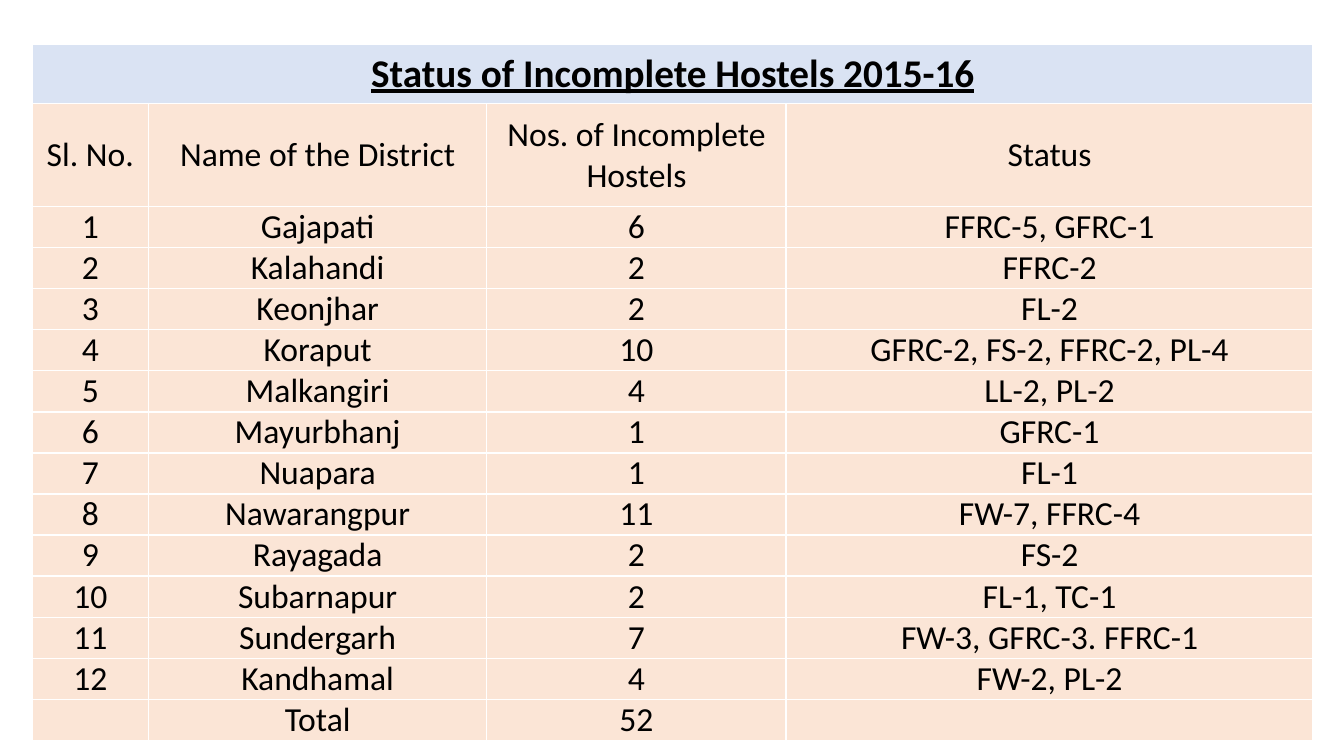
"""Build a slide with a table of incomplete hostels by district, 2015-16."""
from dataclasses import dataclass

import lxml.etree
import pptx
import pptx.dml.color
import pptx.enum.text
import pptx.oxml.ns
import pptx.util
from pptx.util import Cm


@dataclass(frozen=True)
class Theme:
    font: str = "Calibri"
    title_size: int = 28
    body_size: int = 24
    border_width: int = 1
    text: str = "000000"
    title_fill: str = "DAE3F3"
    body_fill: str = "FBE5D6"
    border: str = "FFFFFF"


def add_borders(cell):
    properties = cell._tc.get_or_add_tcPr()
    for side in ("lnL", "lnR", "lnT", "lnB"):
        line = lxml.etree.SubElement(properties, pptx.oxml.ns.qn(f"a:{side}"))
        line.set("w", str(pptx.util.Pt(theme.border_width)))
        fill = lxml.etree.SubElement(line, pptx.oxml.ns.qn("a:solidFill"))
        color = lxml.etree.SubElement(fill, pptx.oxml.ns.qn("a:srgbClr"))
        color.set("val", theme.border)


theme = Theme()
title = "Status of Incomplete Hostels 2015-16"
headings = ("Sl. No.", "Name of the District", "Nos. of Incomplete Hostels", "Status")
districts = [
    ("Gajapati", 6, "FFRC-5, GFRC-1"),
    ("Kalahandi", 2, "FFRC-2"),
    ("Keonjhar", 2, "FL-2"),
    ("Koraput", 10, "GFRC-2, FS-2, FFRC-2, PL-4"),
    ("Malkangiri", 4, "LL-2, PL-2"),
    ("Mayurbhanj", 1, "GFRC-1"),
    ("Nuapara", 1, "FL-1"),
    ("Nawarangpur", 11, "FW-7, FFRC-4"),
    ("Rayagada", 2, "FS-2"),
    ("Subarnapur", 2, "FL-1, TC-1"),
    ("Sundergarh", 7, "FW-3, GFRC-3. FFRC-1"),
    ("Kandhamal", 4, "FW-2, PL-2"),
]
total = sum(count for name, count, status in districts)
rows = [
    (title, "", "", ""),
    headings,
    *((number, *district) for number, district in enumerate(districts, 1)),
    ("", "Total", total, ""),
]
column_widths = [Cm(2.93), Cm(8.53), Cm(7.54), Cm(13.28)]
row_heights = [Cm(1.49), Cm(2.6)] + [Cm(1.02)] * (len(districts) + 1)

deck = pptx.Presentation()
deck.slide_width, deck.slide_height = Cm(33.87), Cm(19.05)
page = deck.slides.add_slide(deck.slide_layouts.get_by_name("Blank"))

table = page.shapes.add_table(
    len(rows), len(headings), Cm(0.81), Cm(1.12), sum(column_widths), sum(row_heights)
).table
table.first_row = False
table.horz_banding = False
for column, width in zip(table.columns, column_widths):
    column.width = width
for row, height in zip(table.rows, row_heights):
    row.height = height
table.cell(0, 0).merge(table.cell(0, len(headings) - 1))

for row_index, values in enumerate(rows):
    is_title = row_index == 0
    for column_index, value in enumerate(values):
        cell = table.cell(row_index, column_index)
        add_borders(cell)
        cell.fill.solid()
        cell.fill.fore_color.rgb = pptx.dml.color.RGBColor.from_string(
            theme.title_fill if is_title else theme.body_fill
        )
        cell.margin_left = cell.margin_right = cell.margin_top = cell.margin_bottom = 0
        cell.vertical_anchor = pptx.enum.text.MSO_ANCHOR.MIDDLE
        if value == "":
            continue
        cell.text_frame.text = str(value)
        para = cell.text_frame.paragraphs[0]
        para.alignment = pptx.enum.text.PP_ALIGN.CENTER
        span = para.runs[0]
        span.font.name = theme.font
        span.font.size = pptx.util.Pt(theme.title_size if is_title else theme.body_size)
        span.font.bold = is_title
        span.font.underline = is_title
        span.font.color.rgb = pptx.dml.color.RGBColor.from_string(theme.text)

deck.save("out.pptx")
